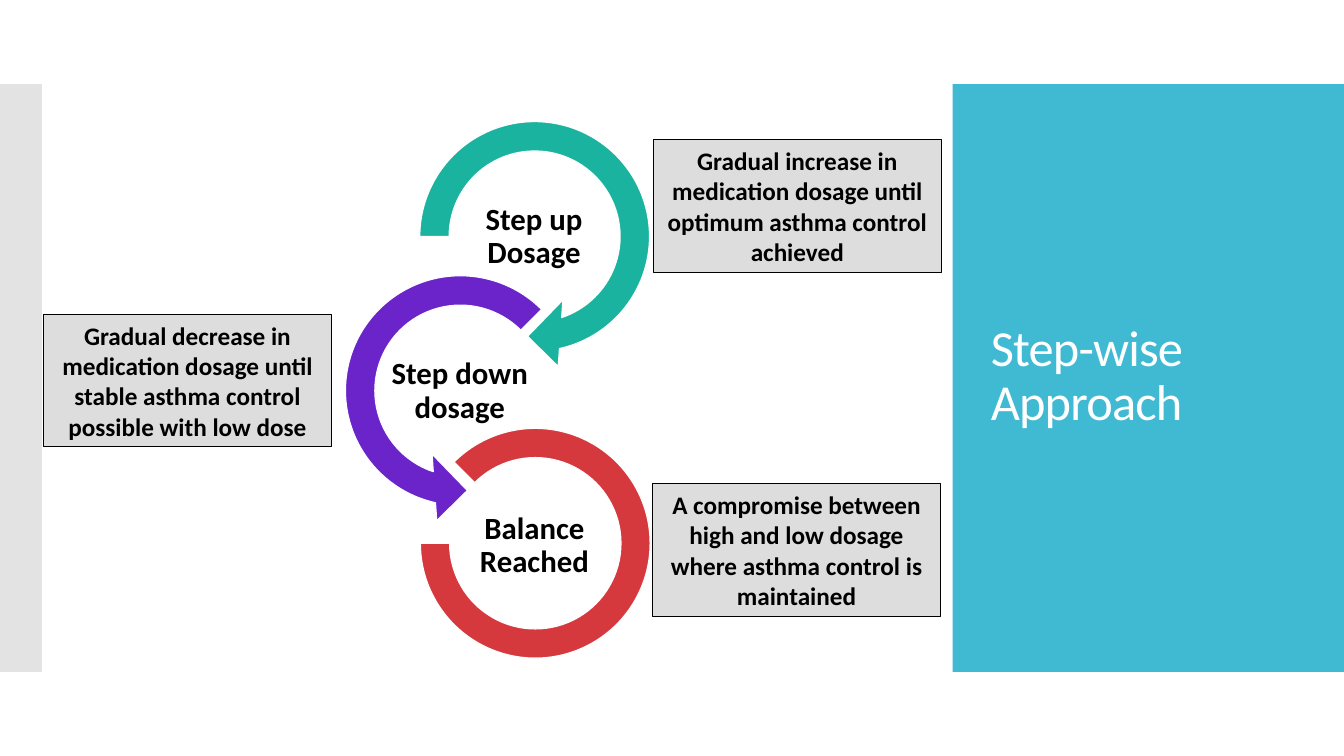
"""Build the step-wise approach slide with three linked rings and notes."""
from lxml import etree
from pptx import Presentation
from pptx.dml.color import RGBColor
from pptx.enum.shapes import MSO_SHAPE
from pptx.enum.text import MSO_ANCHOR, PP_ALIGN
from pptx.oxml.ns import qn
from pptx.util import Inches, Pt

RECT = MSO_SHAPE.RECTANGLE
RIGHT = MSO_SHAPE.CIRCULAR_ARROW
LEFT = MSO_SHAPE.LEFT_CIRCULAR_ARROW
ARC = MSO_SHAPE.BLOCK_ARC
MIDDLE = MSO_ANCHOR.MIDDLE
CENTER = PP_ALIGN.CENTER
START = PP_ALIGN.LEFT

HUES = {
    "panel": "40BAD2", "strip": "C8C8C8", "note": "DDDDDD",
    "up": "1AB39F", "down": "6A24CA", "even": "D5393D",
    "white": "FFFFFF", "black": "000000",
}
CELL = Inches(7.5) // 18
COLS, ROWS = 32, 18

deck = Presentation()
deck.slide_width, deck.slide_height = COLS * CELL, ROWS * CELL
slide = deck.slides.add_slide(deck.slide_layouts[5])


def write(shape, text, size=18, hue="black", bold=True, align=CENTER,
          lead=1.0, inset=None, track=0):
    frame = shape.text_frame
    frame.word_wrap = True
    frame.vertical_anchor = MIDDLE
    if inset is not None:
        frame.margin_left = frame.margin_right = inset
        frame.margin_top = frame.margin_bottom = inset
    para = frame.paragraphs[0]
    para.alignment = align
    para.line_spacing = lead
    run = para.add_run()
    run.text = text
    run.font.name = "Calibri"
    run.font.size = Pt(size)
    run.font.bold = bold
    run.font.color.rgb = RGBColor.from_string(HUES[hue])
    if track:
        run.font._element.set("spc", str(track))


def draw(kind, col, row, wide, high, hue, edge=None, weight=0.75):
    shape = slide.shapes.add_shape(
        kind, *(round(n * CELL) for n in (col, row, wide, high)))
    shape.shadow.inherit = False
    shape.fill.solid()
    shape.fill.fore_color.rgb = RGBColor.from_string(HUES[hue])
    if edge:
        shape.line.color.rgb = RGBColor.from_string(HUES[edge])
        shape.line.width = Pt(weight)
    else:
        shape.line.fill.background()
    return shape


draw(RECT, 22.68, 2, COLS - 22.68, 14, "panel")
strip = draw(RECT, 0, 2, 1, 14, "strip")
tint = strip._element.spPr.find(qn("a:solidFill"))[0]
etree.SubElement(tint, qn("a:alpha")).set("val", "50000")

title = slide.shapes.title
title.left, title.top = round(23.35 * CELL), round(2.95 * CELL)
title.width, title.height = round(7.73 * CELL), round(12.07 * CELL)
write(title, "Step-wise Approach", size=36, hue="white", bold=False,
      align=START, lead=0.9, track=-60)
slide.shapes._spTree.append(title._element)

rings = [
    (RIGHT, 9.55, 2.45, 6.36, "up", (0.11, 11.42, 45, 108, 0.125),
     10.95, "Step up Dosage"),
    (LEFT, 7.78, 6.12, 6.36, "down", (0.11, 11.42, 63, 189, 0.125),
     9.18, "Step down dosage"),
    (ARC, 10.01, 10.2, 5.47, "even", (135, 108, 0.127),
     10.96, "Balance Reached"),
]
for step, (kind, col, row, size, hue, bends, start, text) in enumerate(rings):
    ring = draw(kind, col, row, size, size, hue, "white", 0.85)
    for spot, bend in enumerate(bends):
        ring.adjustments[spot] = bend
    label = slide.shapes.add_textbox(
        *(round(n * CELL) for n in (start, 4.75 + 3.68 * step, 3.53, 1.78)))
    write(label, text, size=22, lead=0.9, inset=Inches(0.02))

notes = [
    (15.55, 3.33, "Gradual increase in medication dosage until optimum "
                  "asthma control achieved"),
    (1.03, 7.49, "Gradual decrease in medication dosage until stable "
                 "asthma control possible with low dose"),
    (15.53, 11.52, "A compromise between high and low dosage where "
                   "asthma control is maintained"),
]
for col, row, text in notes:
    write(draw(RECT, col, row, 6.87, 3.15, "note", "black"), text)

deck.save("out.pptx")
